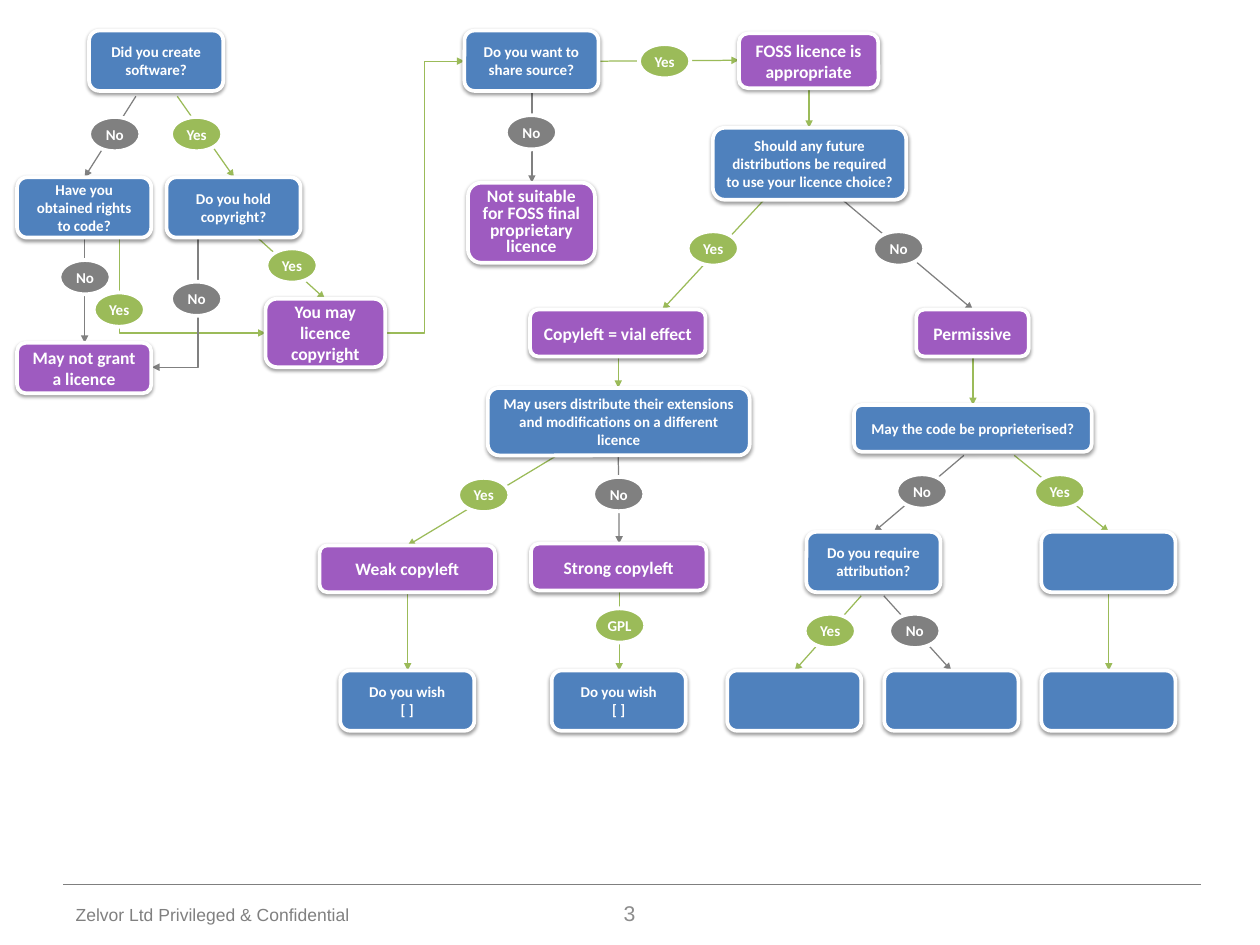
from dataclasses import dataclass
from typing import Any

from lxml.etree import SubElement
from pptx import Presentation
from pptx.dml.color import RGBColor
from pptx.enum.shapes import MSO_CONNECTOR as Connector, MSO_SHAPE as Preset
from pptx.enum.text import MSO_ANCHOR as Anchor, PP_ALIGN as Align
from pptx.oxml.ns import qn
from pptx.util import Inches, Pt

BLUE, PURPLE, GREEN, GREY, WHITE = "4F81BD", "9E5BC0", "9BBB59", "808080", "FFFFFF"
QUESTION_W, QUESTION_H = 1.49, 0.67
OUTCOME_W, OUTCOME_H = 1.95, 0.52
ANSWER_W, ANSWER_H = 0.57, 0.38


def color(hex_code):
    """Turn a hex string into a colour."""
    return RGBColor.from_string(hex_code)


def write(shape, text, size, hex_code, font="Calibri", bold=True, align=Align.CENTER):
    """Write text into a shape, one run for each line."""
    paragraph = shape.text_frame.paragraphs[0]
    paragraph.alignment = align
    for index, line in enumerate(text.split("\n")):
        if index:
            paragraph.add_line_break()
        run = paragraph.add_run()
        run.text = line
        run.font.name, run.font.size, run.font.bold = font, Pt(size), bold
        run.font.color.rgb = color(hex_code)
    return paragraph


def add_line(slide, start, end, hex_code, kind=Connector.STRAIGHT, arrow=True):
    """Draw a shadowless connector between two points."""
    connector = slide.shapes.add_connector(kind, *map(Inches, (*start, *end)))
    connector.line.color.rgb = color(hex_code)
    connector.line.width = Pt(1)
    if arrow:
        SubElement(connector.line._get_or_add_ln(), qn("a:tailEnd"), type="triangle")
    SubElement(connector._element.spPr, qn("a:effectLst"))
    return connector


def add_shadow(shape):
    """Give a shape a soft shadow that falls straight down."""
    effects = shape._element.spPr.find(qn("a:effectLst"))
    shadow = SubElement(effects, qn("a:outerShdw"), blurRad=str(Pt(3.1)),
                        dist=str(Pt(1.6)), dir="5400000", rotWithShape="0")
    black = SubElement(shadow, qn("a:srgbClr"), val="000000")
    SubElement(black, qn("a:alpha"), val="38000")


@dataclass
class Region:
    """A part of the flowchart whose positions count from its top left corner."""

    slide: Any
    left: float
    top: float

    def at(self, x, y):
        """Move a point of the region onto the slide."""
        return self.left + x, self.top + y

    def link(self, hex_code, start, end):
        """Draw a straight arrow."""
        add_line(self.slide, self.at(*start), self.at(*end), hex_code)

    def elbow(self, hex_code, start, end, bend=0.5):
        """Draw an arrow that runs across, along and across again."""
        arrow = add_line(self.slide, self.at(*start), self.at(*end), hex_code, Connector.ELBOW)
        guides = arrow._element.spPr.find(qn("a:prstGeom")).get_or_add_avLst()
        SubElement(guides, qn("a:gd"), name="adj1", fmla=f"val {round(bend * 100000)}")

    def corner(self, hex_code, start, end):
        """Draw an arrow that goes down and then turns left."""
        (x1, y1), (x2, y2) = self.at(*start), self.at(*end)
        middle_x, middle_y = (x1 + x2) / 2, (y1 + y2) / 2
        half_w, half_h = (y2 - y1) / 2, (x1 - x2) / 2
        arrow = add_line(self.slide, (middle_x - half_w, middle_y - half_h),
                         (middle_x + half_w, middle_y + half_h), hex_code, Connector.ELBOW)
        arrow._element.spPr.find(qn("a:prstGeom")).set("prst", "bentConnector2")
        arrow._element.spPr.find(qn("a:xfrm")).set("rot", "5400000")

    def block(self, preset, x, y, width, height, fill):
        """Draw a filled shape with a white outline."""
        shape = self.slide.shapes.add_shape(
            preset, *map(Inches, (*self.at(x, y), width, height)))
        shape.shadow.inherit = False
        shape.fill.solid()
        shape.fill.fore_color.rgb = color(fill)
        shape.line.color.rgb = color(WHITE)
        shape.line.width = Pt(3)
        shape.text_frame.vertical_anchor = Anchor.MIDDLE
        return shape

    def question(self, x, y, text="", width=QUESTION_W, height=QUESTION_H):
        """Draw a blue question box."""
        box = self.block(Preset.FLOWCHART_ALTERNATE_PROCESS, x, y, width, height, BLUE)
        add_shadow(box)
        if text:
            write(box, text, 12, WHITE)

    def outcome(self, x, y, text, width=OUTCOME_W, height=OUTCOME_H, spacing=None):
        """Draw a purple outcome box."""
        box = self.block(Preset.FLOWCHART_ALTERNATE_PROCESS, x, y, width, height, PURPLE)
        add_shadow(box)
        write(box, text, 14, WHITE).line_spacing = spacing

    def answer(self, x, y, text):
        """Draw an oval answer, grey for no and green otherwise."""
        oval = self.block(Preset.OVAL, x, y, ANSWER_W, ANSWER_H, GREY if text == "No" else GREEN)
        oval.text_frame.word_wrap = False
        write(oval, text, 12, WHITE)


def draw_ownership(region):
    """Draw the questions on who holds the rights."""
    region.link(GREY, (1.32, 0.73), (0.75, 1.63))
    region.link(GREEN, (1.78, 0.73), (2.41, 1.63))
    region.link(GREY, (0.75, 2.3), (0.75, 3.47))
    region.link(GREEN, (2.67, 2.3), (3.42, 2.98))
    region.elbow(GREEN, (1.14, 2.3), (2.76, 3.36), bend=0)
    region.elbow(GREEN, (4.08, 3.36), (4.97, 0.34))
    region.corner(GREY, (2.01, 2.3), (1.5, 3.74))
    region.question(0.8, 0, "Did you create software?")
    region.question(0, 1.63, "Have you obtained rights to code?")
    region.question(1.66, 1.63, "Do you hold copyright?")
    region.outcome(0, 3.47, "May not grant a licence", QUESTION_W, 0.56)
    region.outcome(2.76, 2.98, "You may licence copyright", 1.33, 0.76)
    for x, y, text in ((0.8, 0.96, "No"), (1.71, 0.96, "Yes"), (0.47, 2.55, "No"),
                       (0.85, 2.91, "Yes"), (1.71, 2.79, "No"), (2.77, 2.42, "Yes")):
        region.answer(x, y, text)


def draw_sharing(region):
    """Draw the questions on sharing source and on later distributions."""
    region.link(GREEN, (1.49, 0.34), (3.05, 0.33))
    region.link(GREY, (0.75, 0.67), (0.75, 1.69))
    region.link(GREEN, (3.83, 0.64), (3.83, 1.08))
    region.link(GREEN, (3.33, 1.88), (2.2, 3.1))
    region.link(GREY, (4.2, 1.88), (5.65, 3.1))
    region.question(0, 0, "Do you want to share source?")
    region.outcome(3.05, 0.03, "FOSS licence is appropriate", 1.55, 0.61)
    region.outcome(0.04, 1.69, "Not suitable for FOSS final proprietary licence", 1.41, 0.89, 0.8)
    region.question(2.76, 1.08, "Should any future distributions be required "
                    "to use your licence choice?", 2.15, 0.8)
    for x, y, text in ((1.94, 0.15, "Yes"), (0.46, 0.94, "No"),
                       (2.48, 2.23, "Yes"), (4.54, 2.23, "No")):
        region.answer(x, y, text)


def draw_copyleft(region):
    """Draw the copyleft branch."""
    region.link(GREEN, (3.32, 0.52), (3.32, 0.87))
    region.link(GREEN, (2.64, 1.62), (0.98, 2.62))
    region.link(GREY, (3.32, 1.62), (3.33, 2.6))
    region.link(GREEN, (0.98, 3.14), (0.98, 4.01))
    region.link(GREEN, (3.33, 3.12), (3.33, 4.01))
    region.outcome(2.34, 0, "Copyleft = vial effect")
    region.question(1.87, 0.87, "May users distribute their extensions and "
                    "modifications on a different licence", 2.91, 0.75)
    region.outcome(0, 2.62, "Weak copyleft")
    region.outcome(2.35, 2.6, "Strong copyleft")
    for x in (0.23, 2.58):
        region.question(x, 4.01, "Do you wish\n[ ]")
    for x, y, text in ((1.54, 1.87, "Yes"), (3.04, 1.86, "No"), (3.05, 3.32, "GPL")):
        region.answer(x, y, text)


def draw_permissive(region):
    """Draw the permissive branch."""
    region.link(GREEN, (2.73, 0.52), (2.73, 1.06))
    region.link(GREY, (2.63, 1.62), (1.63, 2.47))
    region.link(GREEN, (3.19, 1.62), (4.24, 2.47))
    region.link(GREEN, (4.24, 3.15), (4.24, 4.01))
    region.link(GREEN, (1.49, 3.18), (0.75, 4.01))
    region.link(GREY, (1.74, 3.18), (2.49, 4.01))
    region.outcome(2.1, 0, "Permissive", 1.25)
    region.question(1.41, 1.06, "May the code be proprieterised?", 2.64, 0.52)
    region.question(0.88, 2.47, "Do you require attribution?")
    region.question(3.49, 2.47)
    for column in range(3):
        region.question(column * 1.745, 4.01)
    for x, y, text in ((1.88, 1.83, "No"), (3.41, 1.83, "Yes"),
                       (0.86, 3.38, "Yes"), (1.8, 3.38, "No")):
        region.answer(x, y, text)


def draw_footer(region):
    """Draw the rule, the confidentiality note and the page number."""
    add_line(region.slide, region.at(0, 0), region.at(12.64, 0), "7F7F7F", arrow=False)
    for x, y, width, height, text, size, hex_code, align in (
            (0, 0.14, 3.8, 0.38, "Zelvor Ltd Privileged & Confidential", 14, GREY, Align.LEFT),
            (4.08, 0.04, 4.43, 0.56, "3", 17, "8C8C8C", Align.CENTER)):
        note = region.slide.shapes.add_textbox(*map(Inches, (*region.at(x, y), width, height)))
        frame = note.text_frame
        frame.word_wrap = True
        frame.vertical_anchor = Anchor.MIDDLE
        frame.margin_left = frame.margin_right = Inches(0.14)
        frame.margin_top = frame.margin_bottom = Inches(0.07)
        write(note, text, size, hex_code, "Arial", False, align)


def main():
    """Build the licence flowchart."""
    deck = Presentation()
    deck.slide_width, deck.slide_height = Inches(14), Inches(10.5)
    slide = deck.slides.add_slide(deck.slide_layouts[6])
    draw_footer(Region(slide, 0.7, 9.83))
    draw_ownership(Region(slide, 0.19, 0.34))
    draw_sharing(Region(slide, 5.16, 0.34))
    draw_copyleft(Region(slide, 3.55, 3.44))
    draw_permissive(Region(slide, 8.08, 3.44))
    deck.save("out.pptx")


if __name__ == "__main__":
    main()
